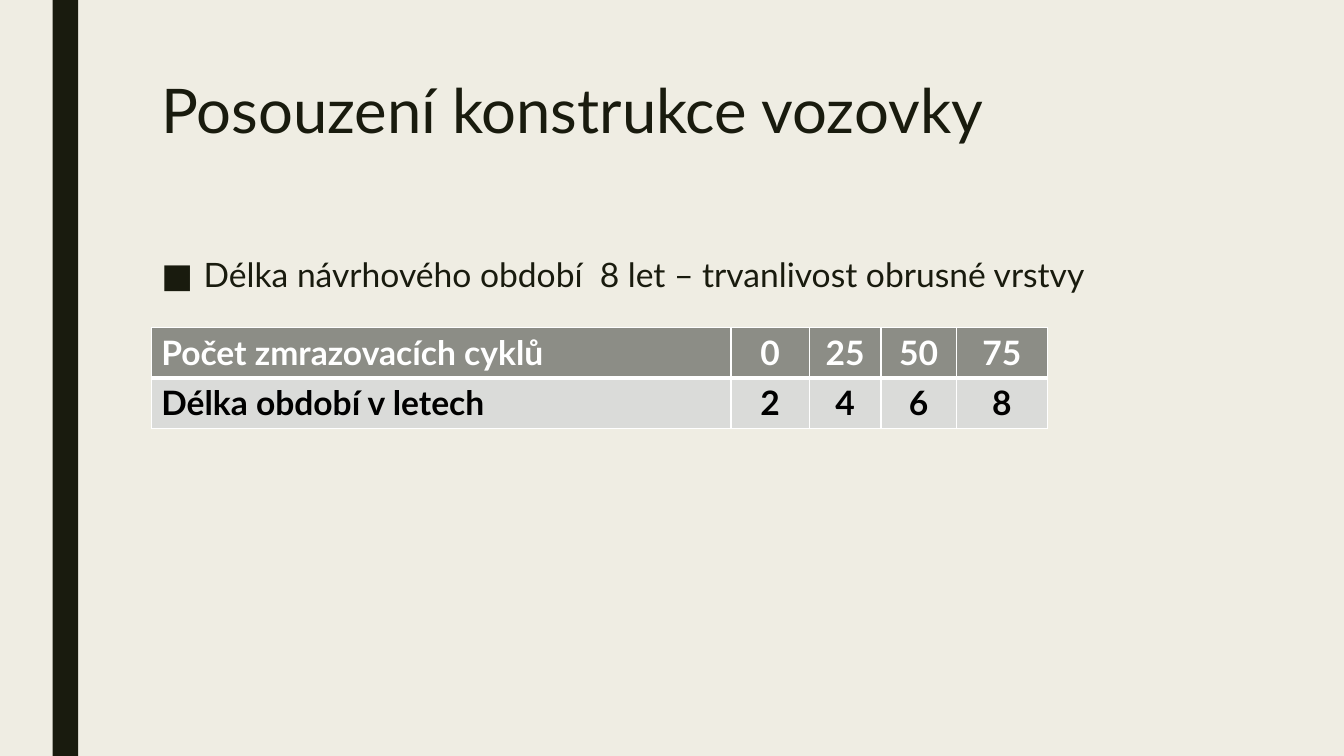
from lxml.etree import SubElement
from pptx import Presentation
from pptx.dml.color import RGBColor
from pptx.enum.shapes import MSO_SHAPE
from pptx.enum.text import MSO_ANCHOR, MSO_AUTO_SIZE, PP_ALIGN
from pptx.oxml.ns import qn
from pptx.util import Cm, Pt

TITLE = "Posouzení konstrukce vozovky"
BULLET = "Délka návrhového období  8 let – trvanlivost obrusné vrstvy"
ROWS = [
    ("Počet zmrazovacích cyklů", "0", "25", "50", "75"),
    ("Délka období v letech", "2", "4", "6", "8"),
]
ROW_STYLES = [
    {"fill": "8C8D86", "text": "FFFFFF", "lines": {"L": 1, "R": 1, "T": 1, "B": 3}},
    {"fill": "DADBD9", "text": "000000", "lines": {"L": 1, "R": 1, "T": 3, "B": 1}},
]
COLUMN_WIDTHS = [14.61, 1.98, 1.8, 1.9, 2.29]
ROW_HEIGHT = 1.27
LEFT, CONTENT_WIDTH = 3.81, 26.67
FONT, DARK, PAPER, WHITE = "Lato", "191B0E", "EFEDE3", "FFFFFF"


def paint(fill, color):
    fill.solid()
    fill.fore_color.rgb = RGBColor.from_string(color)


def add_span(para, text, size, color, bold=False):
    span = para.add_run()
    span.text = text
    span.font.name = FONT
    span.font.size = Pt(size)
    span.font.bold = bold
    paint(span.font.fill, color)


def place_text(box, top, height, text, size, line_spacing):
    box.left, box.top = Cm(LEFT), Cm(top)
    box.width, box.height = Cm(CONTENT_WIDTH), Cm(height)
    frame = box.text_frame
    frame.word_wrap = True
    frame.auto_size = MSO_AUTO_SIZE.NONE
    frame.vertical_anchor = MSO_ANCHOR.TOP
    para = frame.paragraphs[0]
    para.alignment = PP_ALIGN.LEFT
    para.line_spacing = line_spacing
    add_span(para, text, size, DARK)
    return para


def add_bullet(para):
    para.space_before, para.space_after = Pt(10), Pt(2)
    properties = para._p.get_or_add_pPr()
    properties.set("marL", str(Cm(1.07)))
    properties.set("indent", str(-Cm(1.07)))
    SubElement(properties, qn("a:buFont"), typeface=FONT)
    SubElement(properties, qn("a:buChar"), char="■")


def add_borders(cell, lines):
    properties = cell._tc.get_or_add_tcPr()
    for side, width in lines.items():
        line = SubElement(properties, qn(f"a:ln{side}"), w=str(Pt(width)))
        solid = SubElement(line, qn("a:solidFill"))
        SubElement(solid, qn("a:srgbClr"), val=WHITE)


def add_cycle_table(page):
    frame = page.shapes.add_table(
        len(ROWS), len(COLUMN_WIDTHS), Cm(LEFT), Cm(8.25),
        Cm(sum(COLUMN_WIDTHS)), Cm(ROW_HEIGHT * len(ROWS)))
    table = frame.table
    for column, width in zip(table.columns, COLUMN_WIDTHS):
        column.width = Cm(width)
    for row, texts, style in zip(table.rows, ROWS, ROW_STYLES):
        row.height = Cm(ROW_HEIGHT)
        for index, (cell, text) in enumerate(zip(row.cells, texts)):
            add_borders(cell, style["lines"])
            paint(cell.fill, style["fill"])
            para = cell.text_frame.paragraphs[0]
            para.alignment = PP_ALIGN.CENTER if index else PP_ALIGN.LEFT
            add_span(para, text, 24, style["text"], True)


def main():
    deck = Presentation()
    deck.slide_width, deck.slide_height = Cm(33.87), Cm(19.05)
    page = deck.slides.add_slide(deck.slide_layouts[1])
    paint(page.background.fill, PAPER)

    bar = page.shapes.add_shape(
        MSO_SHAPE.RECTANGLE, Cm(1.33), 0, Cm(0.64), deck.slide_height)
    bar.shadow.inherit = False
    paint(bar.fill, DARK)
    bar.line.fill.background()

    place_text(page.shapes.title, 1.9, 4.11, TITLE, 44, 0.89)
    add_bullet(place_text(page.placeholders[1], 6.35, 1.6, BULLET, 24, 0.94))
    add_cycle_table(page)
    deck.save("out.pptx")


if __name__ == "__main__":
    main()
